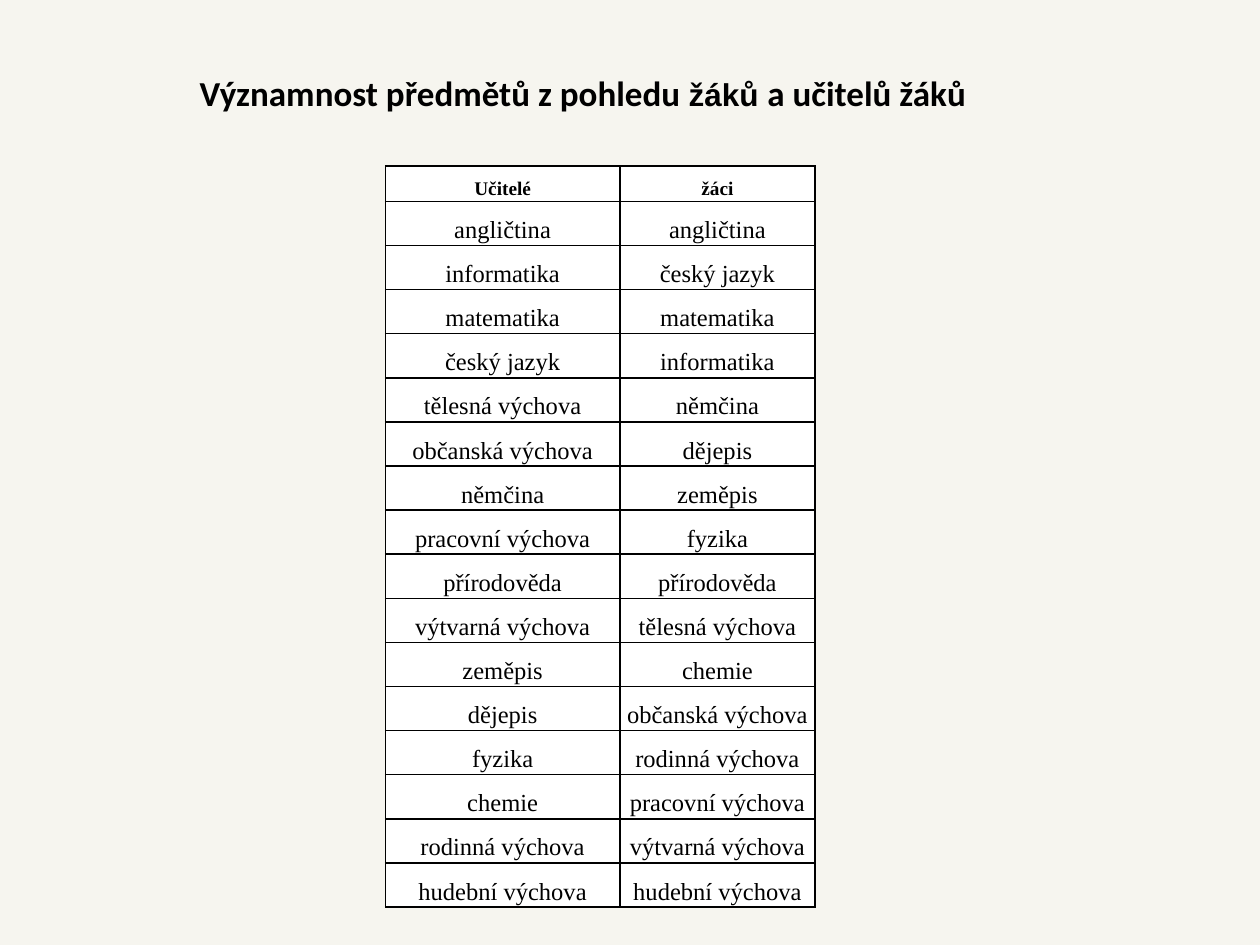
from lxml import etree
from pptx import Presentation
from pptx.dml.color import RGBColor
from pptx.enum import text
from pptx.oxml import ns
from pptx.util import Pt

HUES = {"ground": "F6F5EF", "cell": "FFFFFF", "ink": "000000"}
NO_STYLE = "{2D5ABB26-0587-4C30-8999-92F81FD0307C}"
TITLE = [("Významnost předmětů z pohledu ", 20, "Calibri"),
         ("žáků ", 18, "Arial"),
         ("a učitelů žáků", 20, "Calibri")]
RANKS = [
    ("Učitelé", "žáci"),
    ("angličtina", "angličtina"),
    ("informatika", "český jazyk"),
    ("matematika", "matematika"),
    ("český jazyk", "informatika"),
    ("tělesná výchova", "němčina"),
    ("občanská výchova", "dějepis"),
    ("němčina", "zeměpis"),
    ("pracovní výchova", "fyzika"),
    ("přírodověda", "přírodověda"),
    ("výtvarná výchova", "tělesná výchova"),
    ("zeměpis", "chemie"),
    ("dějepis", "občanská výchova"),
    ("fyzika", "rodinná výchova"),
    ("chemie", "pracovní výchova"),
    ("rodinná výchova", "výtvarná výchova"),
    ("hudební výchova", "hudební výchova"),
]


def hue(name):
    """Return the named colour."""
    return RGBColor.from_string(HUES[name])


def add_title(slide, left, top, width, height):
    """Fill the title placeholder and move it to the given box."""
    title = slide.shapes.title
    title.left, title.top = Pt(left), Pt(top)
    title.width, title.height = Pt(width), Pt(height)
    frame = title.text_frame
    frame.vertical_anchor = text.MSO_ANCHOR.MIDDLE
    para = frame.paragraphs[0]
    para.alignment = text.PP_ALIGN.CENTER
    for words, size, face in TITLE:
        run = para.add_run()
        run.text = words
        font = run.font
        font.size, font.name, font.bold = Pt(size), face, True
        font.color.rgb = hue("ink")


def add_edges(cell, sides):
    """Draw thin lines on the given sides of a cell."""
    props = cell._tc.get_or_add_tcPr()
    for side in sides:
        line = etree.SubElement(props, ns.qn(f"a:ln{side}"), w=str(Pt(1)))
        fill = etree.SubElement(line, ns.qn("a:solidFill"))
        etree.SubElement(fill, ns.qn("a:srgbClr"), val=HUES["ink"])


def set_cell(cell, words, head):
    """Write one bordered subject cell."""
    add_edges(cell, "LRTB")
    cell.fill.solid()
    cell.fill.fore_color.rgb = hue("cell")
    cell.text = words
    para = cell.text_frame.paragraphs[0]
    para.alignment = text.PP_ALIGN.CENTER
    para.line_spacing = 1.5
    font = para.font
    font.name, font.size, font.bold = "Times New Roman", Pt(11 if head else 14), head
    font.color.rgb = hue("ink")


def set_blank(cell, sides):
    """Leave a cell clear, with small type so that its row stays low."""
    add_edges(cell, sides)
    cell.fill.background()
    para = cell.text_frame.paragraphs[0]
    etree.SubElement(para._p, ns.qn("a:endParaRPr"), sz="800")


def add_ranks(slide, left, top, width, height):
    """Place the table of subjects, with a clear first row and column."""
    widths = [28.8, 133.9, width - 162.7]
    lows = [16.6, 20.1]
    step = (height - sum(lows)) / (len(RANKS) - 1)
    heights = lows + [step] * (len(RANKS) - 1)
    frame = slide.shapes.add_table(len(heights), len(widths), Pt(left), Pt(top),
                                   Pt(width), Pt(height))
    table = frame.table
    table.first_row = table.horz_banding = False
    table._tbl.tblPr.find(ns.qn("a:tableStyleId")).text = NO_STYLE
    for col, size in zip(table.columns, widths):
        col.width = Pt(size)
    for row, size in zip(table.rows, heights):
        row.height = Pt(size)
    for cell in table.iter_cells():
        cell.margin_left = cell.margin_right = 0
        cell.margin_top = cell.margin_bottom = 0
        cell.vertical_anchor = text.MSO_ANCHOR.MIDDLE
    for col in range(3):
        set_blank(table.cell(0, col), "B" if col else "")
    table.cell(0, 1).merge(table.cell(0, 2))
    for row, pair in enumerate(RANKS, 1):
        set_blank(table.cell(row, 0), "R")
        for col, words in enumerate(pair, 1):
            set_cell(table.cell(row, col), words, row == 1)


def main():
    """Build and save the slide."""
    deck = Presentation()
    deck.slide_width, deck.slide_height = Pt(720), Pt(540)
    slide = deck.slides.add_slide(deck.slide_layouts[5])
    ground = slide.background.fill
    ground.solid()
    ground.fore_color.rgb = hue("ground")
    add_title(slide, 36, 21.6, 594, 62.6)
    add_ranks(slide, 191.5, 78.4, 274.3, 439.9)
    deck.save("out.pptx")


if __name__ == "__main__":
    main()
